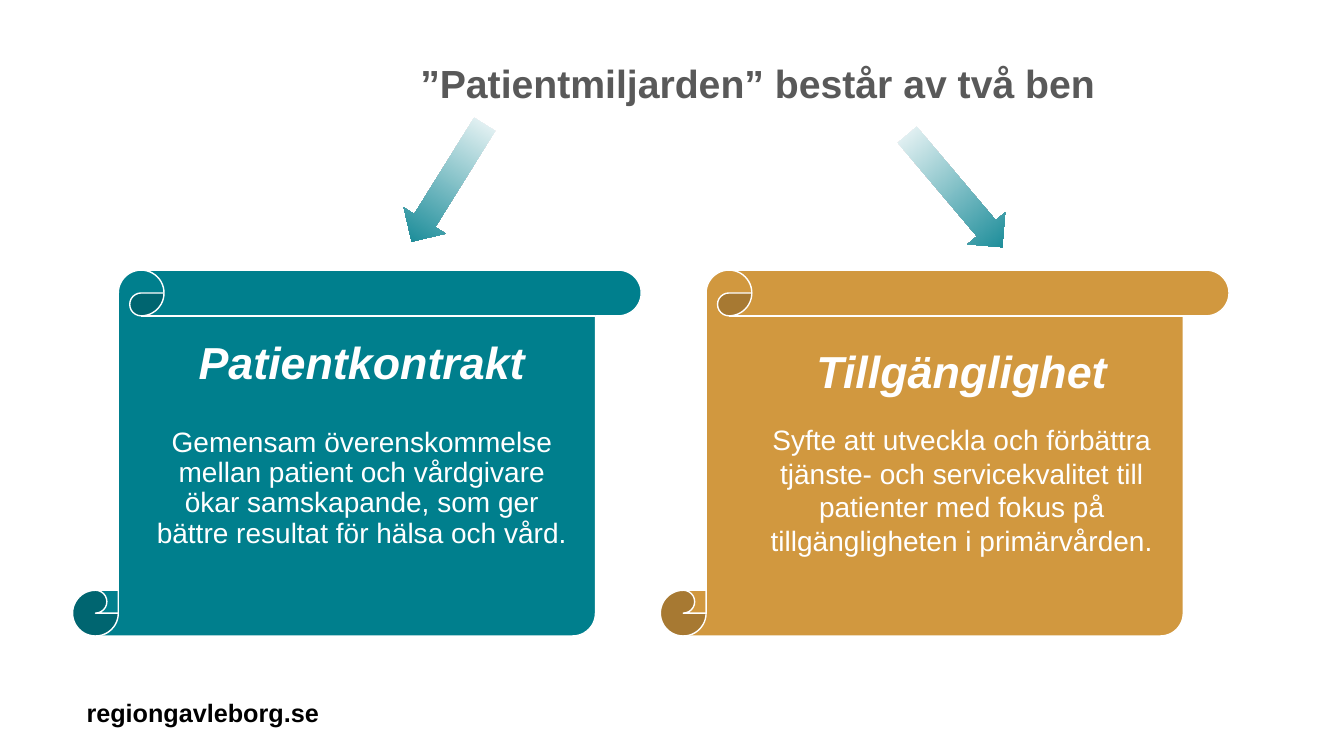
from pptx import Presentation
from pptx.dml.color import RGBColor
from pptx.enum.shapes import MSO_SHAPE
from pptx.enum.text import MSO_ANCHOR, PP_ALIGN
from pptx.util import Inches, Pt

SCROLL = MSO_SHAPE.VERTICAL_SCROLL
ARROW = MSO_SHAPE.RIGHT_ARROW
TOP = MSO_ANCHOR.TOP
LEFT = PP_ALIGN.LEFT
CENTER = PP_ALIGN.CENTER

FONT = "Arial"
TEAL = "007F8D"
OCHRE = "D1983F"
WHITE = "FFFFFF"
GREY = "595959"
BLACK = "000000"


def color(value):
    """Turn a hex string into a colour."""
    return RGBColor.from_string(value)


def add_box(page, left, top, width, height):
    """Add a wrapping text box and return its text frame."""
    box = page.shapes.add_textbox(
        Inches(left), Inches(top), Inches(width), Inches(height)
    )
    frame = box.text_frame
    frame.word_wrap = True
    frame.vertical_anchor = TOP
    return frame


def write(para, text, size, ink, bold=False, italic=False, align=LEFT,
          spacing=1.0, before=0, after=0):
    """Fill a paragraph with formatted text, breaking at each newline."""
    para.alignment = align
    para.line_spacing = spacing
    para.space_before = Pt(before)
    para.space_after = Pt(after)
    for index, line in enumerate(text.split("\n")):
        if index:
            para.add_line_break()
        span = para.add_run()
        span.text = line
        span.font.name = FONT
        span.font.size = Pt(size)
        span.font.bold = bold
        span.font.italic = italic
        span.font.color.rgb = color(ink)


def add_scroll(page, left, fill):
    """Draw one of the two scrolls that carry the legs."""
    scroll = page.shapes.add_shape(
        SCROLL, Inches(left), Inches(2.68), Inches(5.64), Inches(3.63)
    )
    scroll.shadow.inherit = False
    scroll.fill.solid()
    scroll.fill.fore_color.rgb = color(fill)
    scroll.line.color.rgb = color(WHITE)
    scroll.line.width = Pt(1)


def add_leg_text(page, left, top, heading, body, spacing, before):
    """Write the heading and description of one leg."""
    frame = add_box(page, left, top, 5.16, 2.97)
    write(frame.paragraphs[0], heading, 32, WHITE, bold=True, italic=True,
          align=CENTER, spacing=spacing, after=18)
    write(frame.add_paragraph(), body, 20, WHITE, align=CENTER,
          spacing=spacing, before=before)


def add_arrow(page, left, top, width, rotation):
    """Draw a borderless arrow that fades from white to teal."""
    arrow = page.shapes.add_shape(
        ARROW, Inches(left), Inches(top), Inches(width), Inches(0.49)
    )
    arrow.shadow.inherit = False
    arrow.rotation = rotation
    arrow.line.fill.background()
    arrow.fill.gradient()
    arrow.fill.gradient_angle = 0
    for stop, shade in zip(arrow.fill.gradient_stops, (WHITE, TEAL)):
        stop.color.rgb = color(shade)


def main():
    """Build the slide and save it."""
    deck = Presentation()
    deck.slide_width = Inches(13.33)
    deck.slide_height = Inches(7.5)
    page = deck.slides.add_slide(deck.slide_layouts[6])

    footer = add_box(page, 0.76, 6.87, 2.62, 0.4)
    write(footer.paragraphs[0], "regiongavleborg.se", 18, BLACK, bold=True)
    title = add_box(page, 4.07, 0.59, 7.01, 0.79)
    write(title.paragraphs[0], "”Patientmiljarden” består av två ben", 28,
          GREY, bold=True, spacing=0.9)

    add_scroll(page, 0.72, TEAL)
    add_scroll(page, 6.55, OCHRE)
    add_leg_text(
        page, 1.01, 3.33, "Patientkontrakt",
        "Gemensam överenskommelse\nmellan patient och vårdgivare\n"
        "ökar samskapande, som ger\nbättre resultat för hälsa och vård.",
        spacing=0.9, before=10,
    )
    add_leg_text(
        page, 6.96, 3.36, "Tillgänglighet",
        "Syfte att utveckla och förbättra\ntjänste- och servicekvalitet till\n"
        "patienter med fokus på\ntillgängligheten i primärvården.",
        spacing=1.0, before=0,
    )

    add_arrow(page, 3.76, 1.57, 1.37, 121.9)
    add_arrow(page, 8.74, 1.65, 1.46, 49.8)
    deck.save("out.pptx")


if __name__ == "__main__":
    main()
